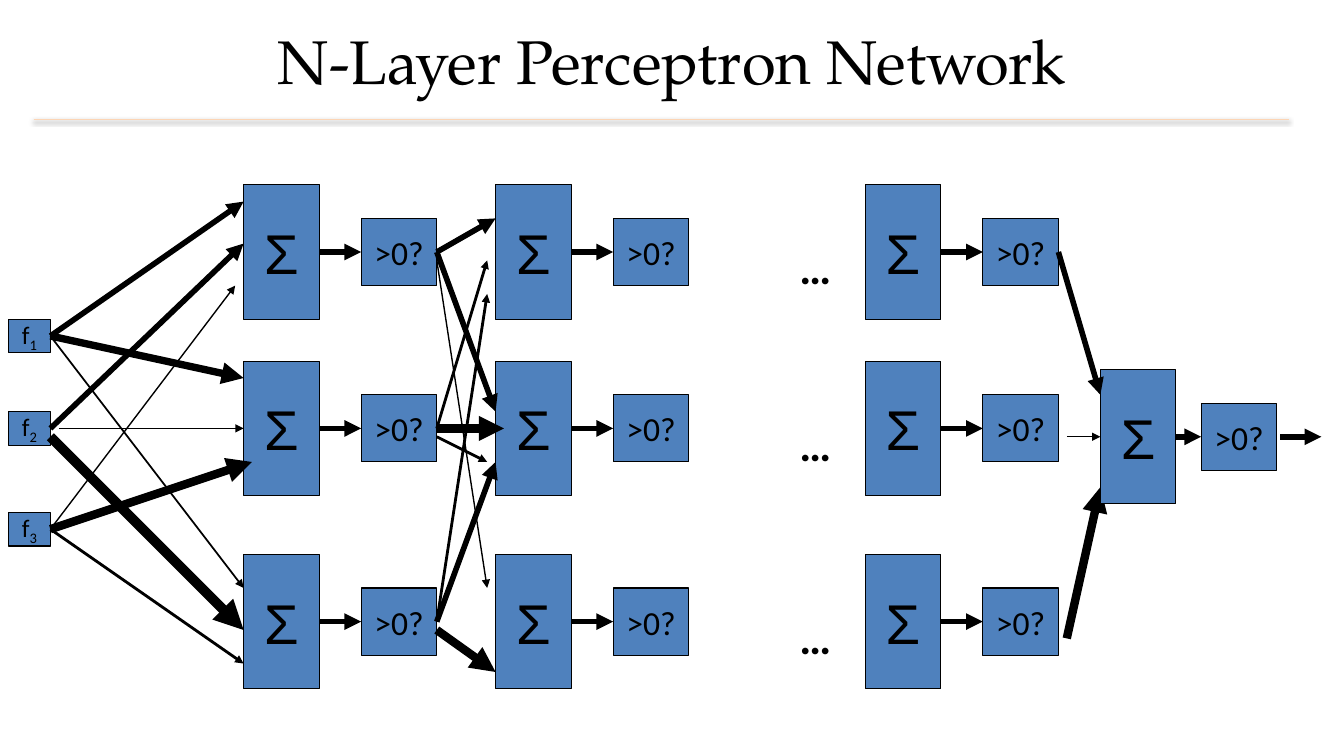
from lxml.etree import SubElement as Sub
from pptx import Presentation
from pptx.dml.color import RGBColor
from pptx.enum.shapes import MSO_CONNECTOR as Conn, MSO_SHAPE as Kind
from pptx.enum.text import MSO_ANCHOR as Anchor, PP_ALIGN as Align
from pptx.oxml.ns import qn
from pptx.util import Emu, Inches, Pt

UNIT = Inches(1) // 12  # the slide is 160 by 90 units
RIGHT, LEFT = 3, 1
INK, BLUE, PEACH = "000000", "4F81BD", "FCD5B5"
SUM = dict(name="Arial", size=Pt(40))
GATE = dict(name="Calibri", size=Pt(24))
INPUT = dict(name="Calibri", size=Pt(18))
DOTS = dict(name="Calibri", size=Pt(32), bold=True)
TITLE = dict(name="TeX Gyre Pagella", size=Pt(44))

prs = Presentation()
prs.slide_width, prs.slide_height = Emu(160 * UNIT), Emu(90 * UNIT)
slide = prs.slides.add_slide(prs.slide_layouts[6])
shapes = slide.shapes
ports = {}


def block(x, mid, w, h, text, font, sub="", fill=BLUE, align=Align.CENTER):
    """Add text centred on height mid; a filled block also gets side ports."""
    at = [Emu(int(n * UNIT)) for n in (x, mid - h / 2, w, h)]
    if fill:
        box = shapes.add_shape(Kind.RECTANGLE, *at)
        box.shadow.inherit = False
        box.fill.solid()
        box.fill.fore_color.rgb = RGBColor.from_string(fill)
        box.line.color.rgb = RGBColor.from_string(INK)
        box.line.width = Pt(0.75)
        ports[x, mid], ports[x + w, mid] = (box, LEFT), (box, RIGHT)
    else:
        box = shapes.add_textbox(*at)
    frame = box.text_frame
    frame.word_wrap = False
    frame.vertical_anchor = Anchor.MIDDLE
    para = frame.paragraphs[0]
    para.alignment = align
    for part in filter(None, (text, sub)):
        run = para.add_run()
        run.text = part
        for key, val in font.items():
            setattr(run.font, key, val)
        run.font.color.rgb = RGBColor.from_string(INK)
    if sub:
        run.font._element.set("baseline", "-25000")


def link(x1, y1, x2, y2, width, color=INK, head=True):
    """Draw a line, joined to any block that has a port at its ends."""
    ends = [Emu(int(n * UNIT)) for n in (x1, y1, x2, y2)]
    line = shapes.add_connector(Conn.STRAIGHT, *ends)
    if (x1, y1) in ports:
        line.begin_connect(*ports[x1, y1])
    if (x2, y2) in ports:
        line.end_connect(*ports[x2, y2])
    line.line.color.rgb = RGBColor.from_string(color)
    line.line.width = Pt(width)
    if head:
        Sub(line.get_or_add_ln(), qn("a:tailEnd"), type="triangle")
    return Sub(line._element.spPr, qn("a:effectLst"))


# Title and its rule
glow = link(4, 14.25, 153.4, 14.25, 1, PEACH, head=False)
shade = Sub(glow, qn("a:outerShdw"), blurRad=str(Pt(3.1)), dist=str(Pt(1.6)),
            dir="5400000", rotWithShape="0")
tone = Sub(shade, qn("a:srgbClr"), val=INK)
Sub(tone, qn("a:alpha"), val="38000")
block(0, 7.1, 160, 15, "N-Layer Perceptron Network", TITLE, fill=None)

# This link lies behind the output block
link(127, 76, 131, 58, 6)

# Inputs, hidden layers and output
for num, mid in enumerate((40, 51, 63), 1):
    block(1, mid, 5, 4, "f", INPUT, sub=str(num))

rows = 30, 51, 74
units = [(x, mid, 14) for x in (29, 59, 103) for mid in rows]
for x, mid, step in units + [(131, 52, 12)]:
    block(x, mid, 9, 16, "Σ", SUM)
    block(x + step, mid, 9, 8, ">0?", GATE)
    link(x + 9, mid, x + step, mid, 4)

for mid in rows:
    block(94, mid + 1.75, 6, 7.5, "…", DOTS, fill=None, align=Align.LEFT)

# Weighted links: x1, y1, x2, y2, width
weights = [
    # inputs to first layer
    (6, 40, 29, 24, 4), (6, 40, 29, 45, 5.25), (6, 40, 29, 70, 1.25),
    (6, 51, 29, 29, 4), (7, 51, 29, 51, 1), (6, 52, 29, 75, 7),
    (6, 63, 28, 34, 1), (6, 63, 30, 55, 6), (6, 63, 29, 79, 2),
    # first layer to second
    (52, 30, 59, 26, 4), (52, 30, 59, 49, 4), (52, 31, 58, 70, 1),
    (52, 51, 58, 31, 2), (52, 51, 60, 51, 6), (52, 52, 58, 55, 2),
    (52, 74, 58, 35, 2), (52, 74, 59, 55, 4), (52, 75, 59, 80, 6),
    # last layer to output, and the way out
    (126, 30, 131, 47, 4), (127, 52, 131, 52, 1), (152.4, 52, 157.3, 52, 4),
]
for weight in weights:
    link(*weight)

prs.save("out.pptx")
